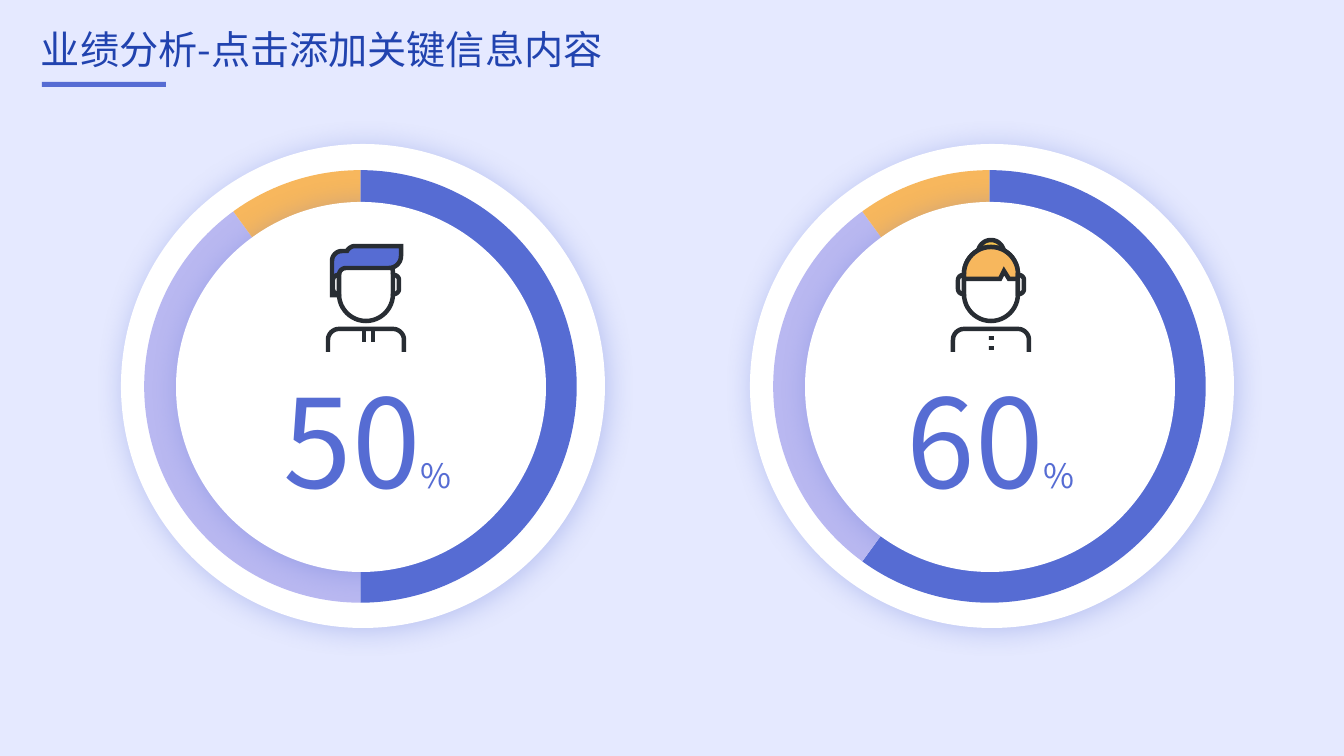
from math import dist

from pptx import Presentation, util as u
from pptx.chart.data import CategoryChartData
from pptx.dml.color import RGBColor
from pptx.enum import chart as charts, shapes, text
from pptx.oxml import parse_xml
from pptx.oxml.ns import nsdecls, qn

PX = 12192000 / 1344
FONT = "Noto Sans CJK SC"
BLUE, LILAC, ORANGE, YELLOW = "566CD3", "B9B8F1", "F7B75D", "F8C44F"
NAVY, INK, WHITE, PALE = "2143AF", "282D33", "FFFFFF", "E5E9FF"


def px(*lengths):
    return [u.Emu(round(length * PX)) for length in lengths]


def paint(fill, color):
    fill.solid()
    fill.fore_color.rgb = RGBColor.from_string(color)


def add_preset(parent, preset, box, color):
    shape = parent.add_shape(preset, *px(*box))
    shape.shadow.inherit = False
    paint(shape.fill, color)
    shape.line.fill.background()
    return shape


def add_disc(box):
    disc = add_preset(slide.shapes, shapes.MSO_SHAPE.OVAL, box, WHITE)
    glow = parse_xml(
        f'<a:outerShdw {nsdecls("a")} blurRad="254000" dist="38100" dir="2700000" '
        f'algn="tl" rotWithShape="0"><a:srgbClr val="{BLUE}"><a:alpha val="33000"/>'
        '</a:srgbClr></a:outerShdw>')
    disc.element.spPr.find(qn("a:effectLst")).append(glow)


def add_text(box, runs, color, inset=10, spacing=None, fit=False):
    """Place one line made of (wording, point size) runs."""
    frame = slide.shapes.add_textbox(*px(*box)).text_frame
    frame.word_wrap = True
    frame.vertical_anchor = text.MSO_ANCHOR.MIDDLE
    frame.margin_left = frame.margin_right = px(inset)[0]
    frame.margin_top = frame.margin_bottom = px(5)[0]
    if fit:
        frame.auto_size = text.MSO_AUTO_SIZE.SHAPE_TO_FIT_TEXT
    line = frame.paragraphs[0]
    line.line_spacing = spacing
    for wording, size in runs:
        run = line.add_run()
        run.text = wording
        run.font.size = u.Pt(size)
        run.font.name = FONT
        run.font.color.rgb = RGBColor.from_string(color)
        run._r.get_or_add_rPr().append(
            parse_xml(f'<a:ea {nsdecls("a")} typeface="{FONT}"/>'))


def add_outline(icon, center, corners, color, closed=True):
    """Draw an inked polygon from (x off center, y, corner radius) triples."""
    points = []
    for i, (x, y, radius) in enumerate(corners):
        if not radius:
            points.append((x, y))
            continue
        ends = []
        for nx, ny, _ in (corners[i - 1], corners[(i + 1) % len(corners)]):
            share = radius / dist((x, y), (nx, ny))
            ends.append(((nx - x) * share, (ny - y) * share))
        (ax, ay), (bx, by) = ends
        for step in range(13):
            t = step / 12
            wa = (1 - t) ** 3 + 1.35 * t * (1 - t) ** 2
            wb = t ** 3 + 1.35 * t ** 2 * (1 - t)
            points.append((x + ax * wa + bx * wb, y + ay * wa + by * wb))
    points = [px(center + x, y) for x, y in points]
    builder = icon.build_freeform(*points[0], scale=1.0)
    builder.add_line_segments(points[1:], close=closed)
    shape = builder.convert_to_shape()
    shape.shadow.inherit = False
    paint(shape.fill, color)
    paint(shape.line.fill, INK)
    shape.line.width = u.Pt(3.2)
    shape.line._ln.append(parse_xml(f'<a:miter {nsdecls("a")} lim="800000"/>'))


deck = Presentation()
deck.slide_width, deck.slide_height = px(1344, 756)
slide = deck.slides.add_slide(deck.slide_layouts[6])
paint(slide.background.fill, PALE)

# Heading
add_preset(slide.shapes, shapes.MSO_SHAPE.RECTANGLE, (42, 82, 124, 5), BLUE)
add_text((31, 23, 1159, 58), [("业绩分析-点击添加关键信息内容", 28)], NAVY, spacing=0.9)

# Parts of the two people: x off the icon's center, y, corner radius
torso = [(-38, 352, 0), (-38, 329, 11), (38, 329, 11), (38, 352, 0)]
face = [(-27, 247, 27), (27, 247, 27), (27, 321, 27), (-27, 321, 27)]
ear = [(27, 275, 0), (33, 275, 5), (33, 294, 5), (27, 294, 0)]
bun = [(-13, 240, 13), (13, 240, 13), (13, 266, 13), (-13, 266, 13)]
quiff = [(35, 246, 0), (35, 268, 12), (-27, 268, 7), (-27, 295, 0),
         (-34, 295, 0), (-34, 251, 10), (-19, 251, 0), (-16, 246, 5)]
fringe = [(-27, 279, 0), (-27, 247, 27), (27, 247, 27), (27, 279, 0),
          (18, 279, 0), (13, 271, 0), (9, 279, 0)]
drawstrings = [(-4, 330, 4, 12), (5, 330, 4, 12)]
buttons = [(-2, 336, 5, 4), (-2, 346, 5, 4)]

# Dials: left edge, shares, number left, icon center, back hair, hair, clothing
dials = [
    (121, (50, 40, 10), 279, 366, [], (quiff, BLUE), drawstrings),
    (750, (60, 30, 10), 902, 991, [(bun, YELLOW)], (fringe, ORANGE), buttons),
]
for left, shares, number_left, center, back_hair, hair, clothing in dials:
    add_disc((left, 144, 484, 484))

    # Ring
    data = CategoryChartData()
    data.categories = ["1", "2", "3"]
    data.add_series("Series 1", shares)
    ring = slide.shapes.add_chart(charts.XL_CHART_TYPE.PIE,
                                  *px(left + 21, 168, 437, 437), data).chart
    ring.has_legend = ring.has_title = False
    ring.font.name, ring.font.size = FONT, u.Pt(10)
    ring.font.color.rgb = RGBColor.from_string("000000")
    ring.plots[0].vary_by_categories = False
    for i, color in enumerate((BLUE, LILAC, ORANGE)):
        wedge = ring.plots[0].series[0].points[i].format
        paint(wedge.fill, color)
        wedge.line.fill.background()
    area = ring.element.find(".//" + qn("c:plotArea"))
    for layout in area.findall(qn("c:layout")):
        area.remove(layout)
    area.insert(0, parse_xml(
        f'<c:layout {nsdecls("c")}><c:manualLayout><c:layoutTarget val="inner"/>'
        '<c:xMode val="edge"/><c:yMode val="edge"/><c:x val="0.005"/><c:y val="0.005"/>'
        '<c:w val="0.99"/><c:h val="0.99"/></c:manualLayout></c:layout>'))

    # Hub and percentage
    add_disc((left + 55, 202, 370, 370))
    add_text((number_left, 360, 216, 159), [(str(shares[0]), 88), ("%", 24)],
             BLUE, inset=5, fit=True)

    # Person
    icon = slide.shapes.add_group_shape().shapes
    left_ear = [(-x, y, radius) for x, y, radius in ear]
    for corners, color in back_hair + [(face, WHITE), hair, (ear, WHITE), (left_ear, WHITE)]:
        add_outline(icon, center, corners, color)
    add_outline(icon, center, torso, WHITE, closed=False)
    for x, y, width, height in clothing:
        add_preset(icon, shapes.MSO_SHAPE.RECTANGLE, (center + x, y, width, height), INK)

deck.save("out.pptx")
